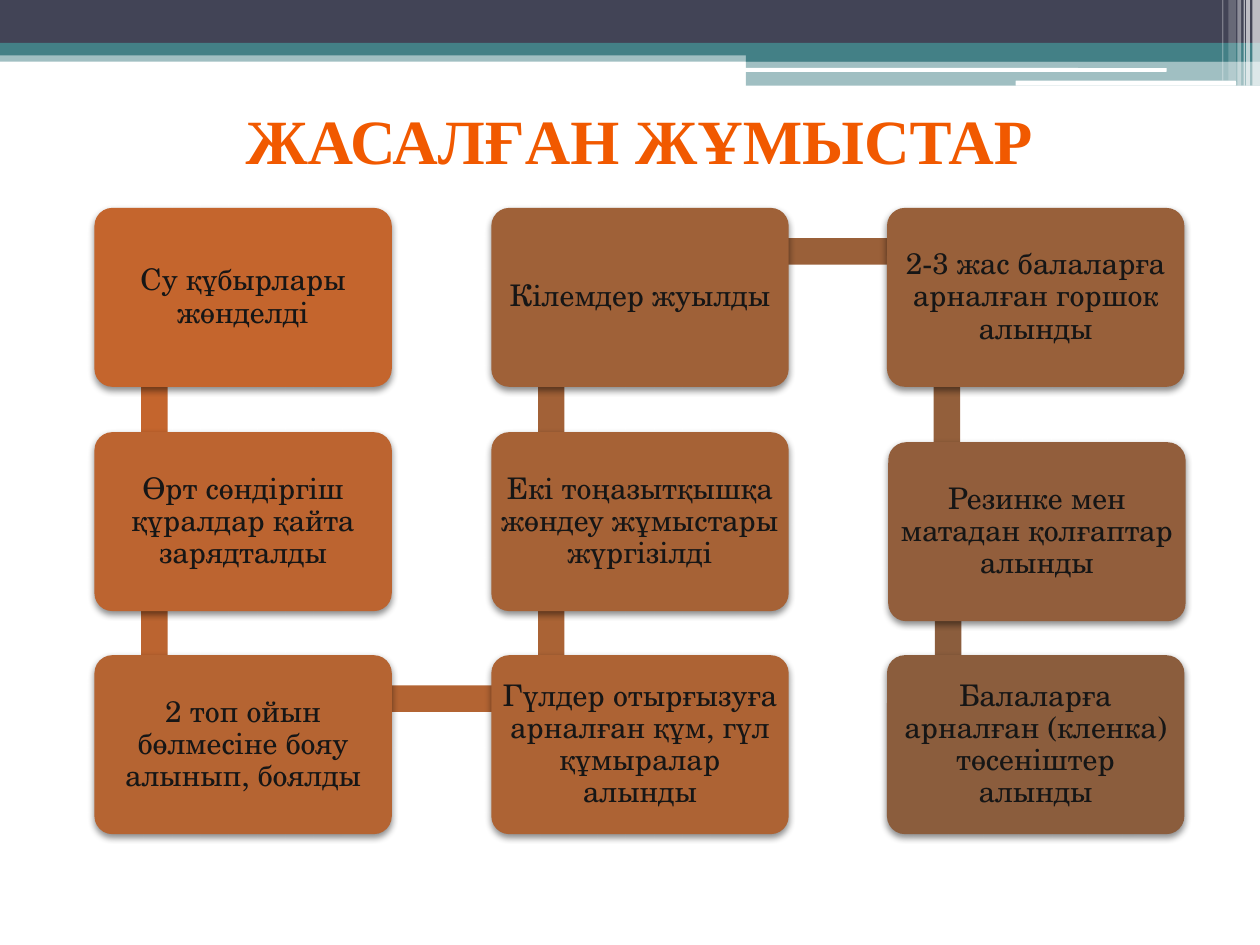
"""Build a slide of nine completed jobs linked in a snaking chain."""
import pptx
import pptx.dml.color
import pptx.enum.shapes
import pptx.enum.text
import pptx.oxml
import pptx.oxml.ns
import pptx.util
from pptx.util import Inches

COLORS = {
    "navy": "424456", "teal": "438086", "white": "FFFFFF",
    "title": "F15900", "text": "161616", "shadow": "000000",
}
RECT = pptx.enum.shapes.MSO_SHAPE.RECTANGLE
ROUND = pptx.enum.shapes.MSO_SHAPE.ROUNDED_RECTANGLE
CARD_WIDTH, CARD_HEIGHT, BAR = 2.36, 1.42, 0.21
COLUMNS = (0.75, 3.9, 7.04)
ROWS = (1.65, 3.43, 5.2)

HEADER = [
    (RECT, 0, 0.4, 10, 0.09, "teal", 50),
    (RECT, 0, 0, 10, 0.34, "navy", 100),
    (RECT, 0, 0.34, 10, 0.1, "teal", 100),
    (RECT, 5.92, 0.39, 4.08, 0.1, "teal", 100),
    (RECT, 5.92, 0.48, 4.08, 0.2, "teal", 50),
    (ROUND, 5.91, 0.54, 3.35, 0.03, "white", 100),
    (ROUND, 8.06, 0.64, 1.75, 0.04, "white", 100),
]
STRIPES = [
    (9.94, 0.06, 0.68, 65), (9.89, 0.03, 0.68, 65), (9.87, 0.01, 0.68, 60),
    (9.82, 0.03, 0.68, 40), (9.75, 0.06, 0.64, 20), (9.7, 0.01, 0.64, 30),
]
JOBS = [
    ("Су құбырлары жөнделді", COLUMNS[0], ROWS[0], "C4652D", "C4652D"),
    ("Өрт сөндіргіш құралдар қайта зарядталды", COLUMNS[0], ROWS[1], "BC6430", "BB6430"),
    ("2 топ ойын бөлмесіне бояу алынып, боялды", COLUMNS[0], ROWS[2], "B56432", "B36433"),
    ("Гүлдер отырғызуға арналған құм, гүл құмыралар алынды",
     COLUMNS[1], ROWS[2], "AD6334", "AA6335"),
    ("Екі тоңазытқышқа жөндеу жұмыстары жүргізілді",
     COLUMNS[1], ROWS[1], "A66236", "A26137"),
    ("Кілемдер жуылды", COLUMNS[1], ROWS[0], "9F6138", "9A6039"),
    ("2-3 жас балаларға арналған горшок алынды", COLUMNS[2], ROWS[0], "98603A", "935F3B"),
    ("Резинке мен матадан қолғаптар алынды", 7.05, 3.51, "925E3C", "8B5D3D"),
    ("Балаларға арналған (кленка) төсеніштер алынды",
     COLUMNS[2], ROWS[2], "8B5D3D", None),
]


def add_block(page, kind, left, top, width, height, color, opacity=100):
    """Add a filled shape without line or shadow."""
    block = page.shapes.add_shape(
        kind, Inches(left), Inches(top), Inches(width), Inches(height))
    block.shadow.inherit = False
    block.line.fill.background()
    block.fill.solid()
    block.fill.fore_color.rgb = pptx.dml.color.RGBColor.from_string(color)
    if opacity < 100:
        tint = block.fill._xPr.find(".//" + pptx.oxml.ns.qn("a:srgbClr"))
        tint.append(pptx.oxml.parse_xml(
            f'<a:alpha {pptx.oxml.ns.nsdecls("a")} val="{opacity * 1000}"/>'))
    return block


def add_span(para, text, font, size, color, bold=False):
    """Add one formatted run to a paragraph."""
    span = para.add_run()
    span.text = text
    span.font.name = font
    span.font.size = pptx.util.Pt(size)
    span.font.bold = bold
    span.font.color.rgb = pptx.dml.color.RGBColor.from_string(color)


def add_shadow(block):
    """Give a shape a soft shadow below it."""
    effects = block._element.spPr.find(pptx.oxml.ns.qn("a:effectLst"))
    effects.append(pptx.oxml.parse_xml(
        f'<a:outerShdw {pptx.oxml.ns.nsdecls("a")} blurRad="50800" dist="25400" '
        f'dir="5400000" rotWithShape="0"><a:srgbClr val="{COLORS["shadow"]}">'
        '<a:alpha val="45000"/></a:srgbClr></a:outerShdw>'))


def add_card(page, text, left, top, color):
    """Add a rounded card with centred text."""
    card = add_block(page, ROUND, left, top, CARD_WIDTH, CARD_HEIGHT, color)
    card.adjustments[0] = 0.1
    add_shadow(card)
    frame = card.text_frame
    frame.word_wrap = True
    frame.vertical_anchor = pptx.enum.text.MSO_ANCHOR.MIDDLE
    frame.margin_left = frame.margin_right = Inches(0.03)
    frame.margin_top = frame.margin_bottom = Inches(0.03)
    para = frame.paragraphs[0]
    para.alignment = pptx.enum.text.PP_ALIGN.CENTER
    para.line_spacing = 0.9
    add_span(para, text, "TeX Gyre Schola", 17, COLORS["text"])


def add_link(page, left, top, next_left, next_top, color):
    """Add the bar that runs from one card to the next."""
    if top == next_top:
        add_block(page, RECT, left + 0.49, top + 0.24, next_left - left, BAR, color)
    else:
        add_block(page, RECT, left + 0.37, min(top, next_top) + 0.36,
                  BAR, abs(next_top - top), color)


def add_header(page):
    """Add the layered band and the pale stripes at its right end."""
    for kind, left, top, width, height, color, opacity in HEADER:
        add_block(page, kind, left, top, width, height, COLORS[color], opacity)
    for left, width, height, opacity in STRIPES:
        add_block(page, RECT, left, 0, width, height, COLORS["white"], opacity)


def add_title(page):
    """Add the slide title."""
    box = page.shapes.add_textbox(Inches(1.85), Inches(0.76), Inches(6.51), Inches(0.71))
    box.text_frame.word_wrap = False
    box.text_frame.auto_size = pptx.enum.text.MSO_AUTO_SIZE.SHAPE_TO_FIT_TEXT
    add_span(box.text_frame.paragraphs[0], "ЖАСАЛҒАН ЖҰМЫСТАР",
             "Times New Roman", 36, COLORS["title"], True)


def main():
    """Build and save the deck."""
    deck = pptx.Presentation()
    deck.slide_width, deck.slide_height = Inches(10), Inches(7.5)
    page = deck.slides.add_slide(deck.slide_layouts[6])
    add_header(page)
    for index, (text, left, top, color, link_color) in enumerate(JOBS):
        if link_color:
            next_left, next_top = JOBS[index + 1][1:3]
            add_link(page, left, top, next_left, next_top, link_color)
        add_card(page, text, left, top, color)
    add_title(page)
    deck.save("out.pptx")


if __name__ == "__main__":
    main()
